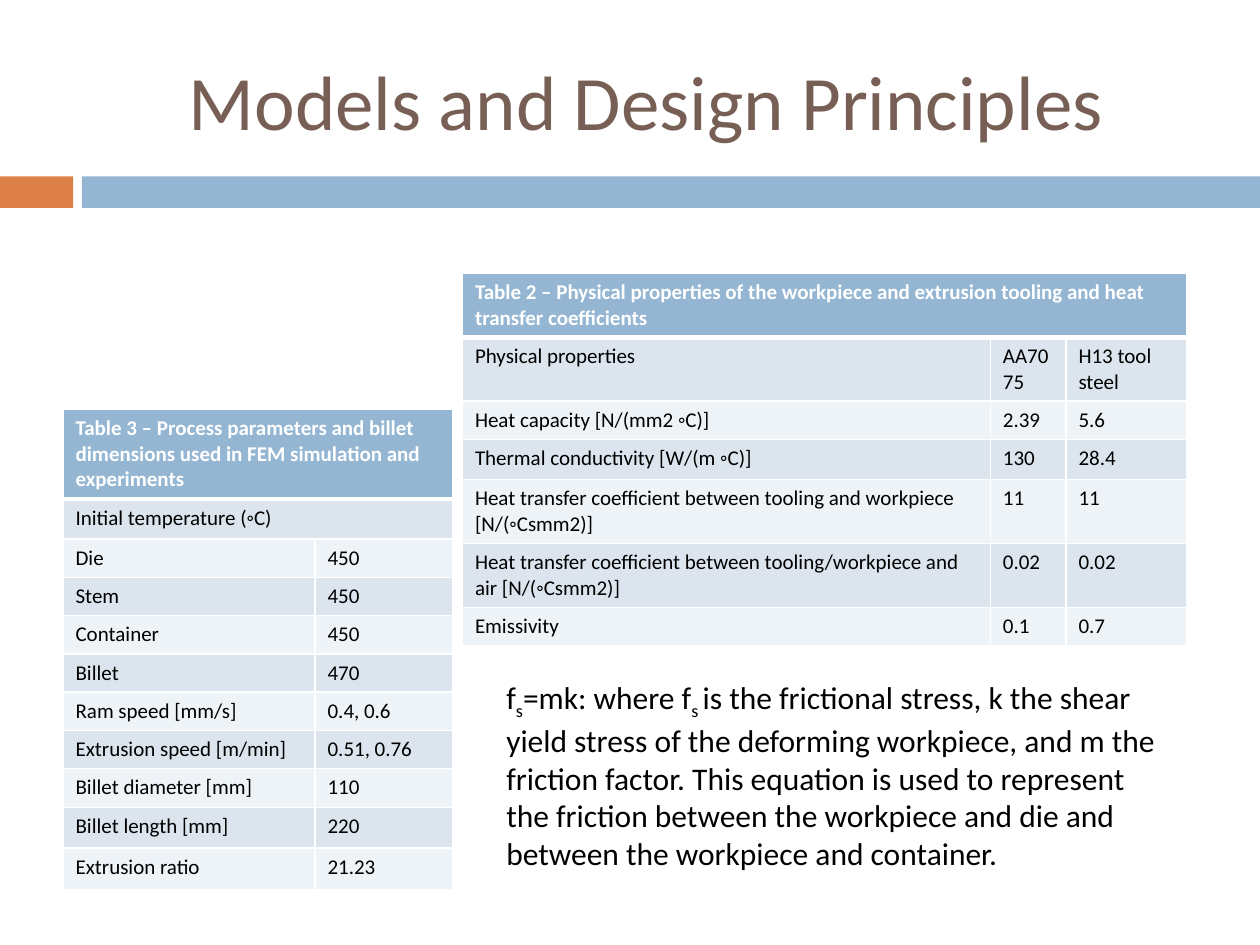
import pptx
import pptx.util
import pptx.dml.color
import pptx.enum.shapes
import pptx.enum.text
import lxml.etree

Inches = pptx.util.Inches
Pt = pptx.util.Pt
HUES = {"accent": "DD8047", "head": "94B6D2", "title": "775F55", "odd": "DCE5EE",
        "even": "EEF3F7", "white": "FFFFFF", "black": "000000"}
NS = "http://schemas.openxmlformats.org/drawingml/2006/main"

HEAT = [
    ["Table 2 – Physical properties of the workpiece and extrusion tooling "
     "and heat transfer coefficients"],
    ["Physical properties", "AA7075", "H13 tool steel"],
    ["Heat capacity [N/(mm2 ◦C)]", "2.39", "5.6"],
    ["Thermal conductivity [W/(m ◦C)]", "130", "28.4"],
    ["Heat transfer coefficient between tooling and workpiece [N/(◦Csmm2)]", "11", "11"],
    ["Heat transfer coefficient between tooling/workpiece and air [N/(◦Csmm2)]",
     "0.02", "0.02"],
    ["Emissivity", "0.1", "0.7"],
]
BILLET = [
    ["Table 3 – Process parameters and billet dimensions used in FEM simulation "
     "and experiments"],
    ["Initial temperature (◦C)"],
    ["Die", "450"],
    ["Stem", "450"],
    ["Container", "450"],
    ["Billet", "470"],
    ["Ram speed [mm/s]", "0.4, 0.6"],
    ["Extrusion speed [m/min]", "0.51, 0.76"],
    ["Billet diameter [mm]", "110"],
    ["Billet length [mm]", "220"],
    ["Extrusion ratio", "21.23"],
]
# Each part is text and whether it is a subscript
STRESS = [
    ("f", False), ("s", True), ("=mk: where f", False), ("s ", True),
    ("is the frictional stress, k the shear yield stress of the deforming workpiece, "
     "and m the friction factor. This equation is used to represent the friction "
     "between the workpiece and die and between the workpiece and container.", False),
]


def color(name):
    return pptx.dml.color.RGBColor.from_string(HUES[name])


def apply(item, values):
    for key, value in values.items():
        setattr(item, key, value)


def write(para, text, size, hue, bold=False):
    run = para.add_run()
    run.text = text
    apply(run.font, {"size": Pt(size), "name": "Calibri", "bold": bold})
    run.font.color.rgb = color(hue)
    return run


def place(shape, box):
    names = ("left", "top", "width", "height")
    apply(shape, dict(zip(names, map(Inches, box))))


def add_title(slide, text, box):
    title = slide.shapes.title
    place(title, box)
    apply(title.text_frame, {"word_wrap": True,
                             "vertical_anchor": pptx.enum.text.MSO_ANCHOR.MIDDLE})
    para = title.text_frame.paragraphs[0]
    para.alignment = pptx.enum.text.PP_ALIGN.CENTER
    write(para, text, 44, "title")


def add_bar(slide, box, hue):
    bar = slide.shapes.add_shape(pptx.enum.shapes.MSO_SHAPE.RECTANGLE, *map(Inches, box))
    bar.shadow.inherit = False
    bar.fill.solid()
    bar.fill.fore_color.rgb = color(hue)
    bar.line.fill.background()


def add_edges(cell, row):
    props = cell._tc.get_or_add_tcPr()
    thick = {(0, "B"), (1, "T")}
    for side in "LRTB":
        width = 3 if (row, side) in thick else 1
        line = lxml.etree.SubElement(props, f"{{{NS}}}ln{side}", w=str(Pt(width)))
        fill = lxml.etree.SubElement(line, f"{{{NS}}}solidFill")
        lxml.etree.SubElement(fill, f"{{{NS}}}srgbClr", val=HUES["white"])


def add_grid(slide, box, cols, rows, data):
    frame = slide.shapes.add_table(len(rows), len(cols), *map(Inches, box))
    table = frame.table
    for col, width in zip(table.columns, cols):
        col.width = Inches(width)
    for row, height in zip(table.rows, rows):
        row.height = Inches(height)
    frame.height = Inches(box[3])
    for r, texts in enumerate(data):
        # A row with a single text spans the whole table
        if len(texts) == 1:
            table.cell(r, 0).merge(table.cell(r, len(cols) - 1))
        band = "head" if r == 0 else "odd" if r % 2 else "even"
        for c in range(len(cols)):
            cell = table.cell(r, c)
            add_edges(cell, r)
            cell.fill.solid()
            cell.fill.fore_color.rgb = color(band)
            if c < len(texts):
                write(cell.text_frame.paragraphs[0], texts[c], 12,
                      "black" if r else "white", r == 0)


def add_note(slide, box, parts):
    frame = slide.shapes.add_textbox(*map(Inches, box)).text_frame
    frame.word_wrap = True
    for text, sub in parts:
        run = write(frame.paragraphs[0], text, 18, "black")
        if sub:
            run._r.get_or_add_rPr().set("baseline", "-25000")


def main():
    deck = pptx.Presentation()
    apply(deck, {"slide_width": Inches(10), "slide_height": Inches(7.5)})
    slide = deck.slides.add_slide(deck.slide_layouts[5])

    # Heading and its band
    add_title(slide, "Models and Design Principles", (0.67, 0.25, 8.92, 1.08))
    add_bar(slide, (0, 1.4, 0.58, 0.25), "accent")
    add_bar(slide, (0.65, 1.4, 9.35, 0.25), "head")

    # Tables
    add_grid(slide, (3.67, 2.17, 5.75, 2.92), (4.19, 0.6, 0.96),
             (0.37, 0.33, 0.29, 0.32, 0.36, 0.33, 0.28), HEAT)
    add_grid(slide, (0.5, 3.25, 3.08, 3.77), (2, 1.09),
             (0.47, 0.32, 0.24, 0.17, 0.26, 0.27, 0.28, 0.29, 0.31, 0.32, 0.33), BILLET)

    # Friction equation
    add_note(slide, (3.92, 5.33, 5.5, 1.92), STRESS)
    deck.save("out.pptx")


if __name__ == "__main__":
    main()
